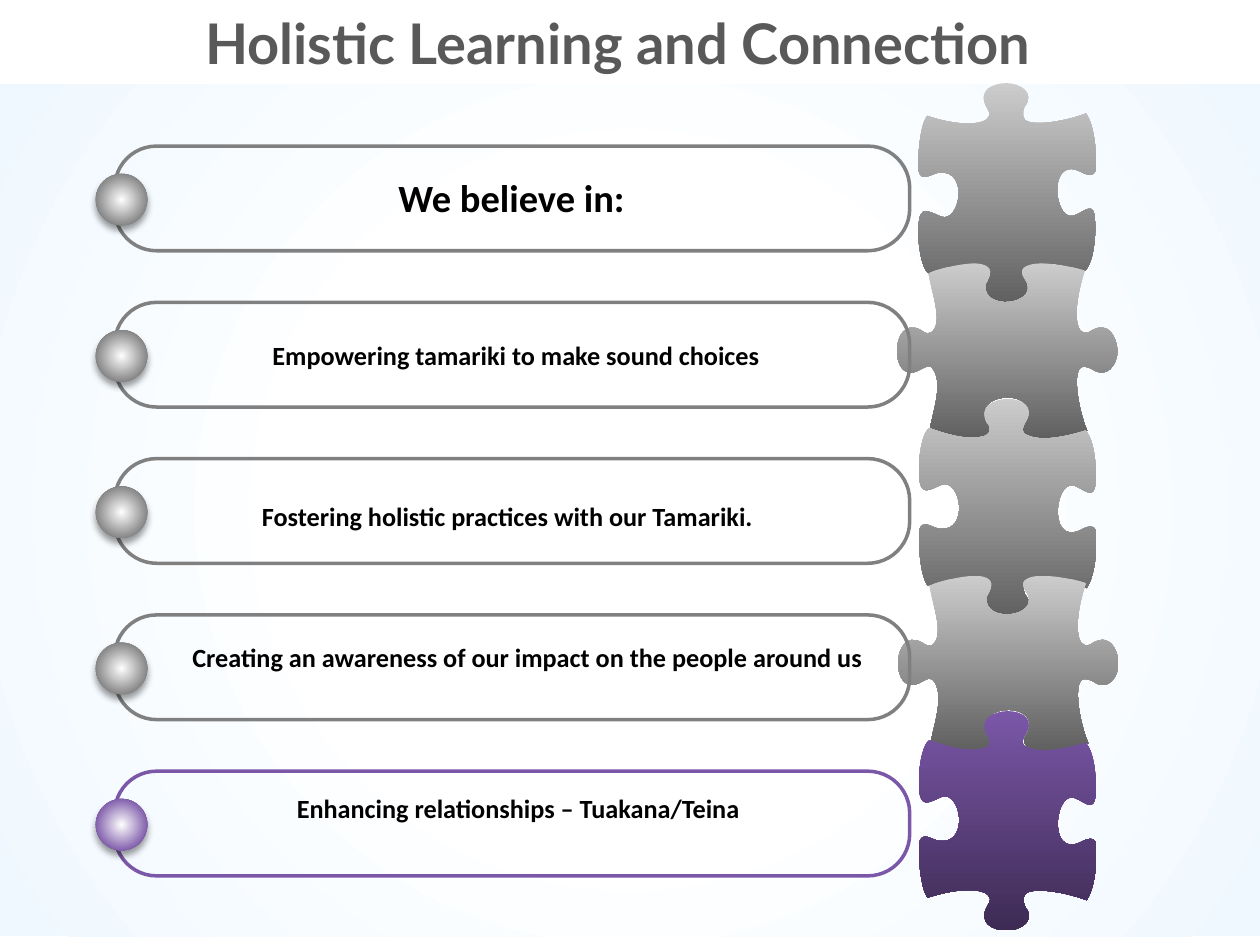
import lxml.etree
import pptx
import pptx.dml.color
import pptx.enum.shapes
import pptx.enum.text
import pptx.oxml.ns
import pptx.util

Pt = pptx.util.Pt
RGBColor = pptx.dml.color.RGBColor
MSO_SHAPE = pptx.enum.shapes.MSO_SHAPE
qn = pptx.oxml.ns.qn

WHITE = RGBColor(0xFF, 0xFF, 0xFF)
BLACK = RGBColor(0x00, 0x00, 0x00)
PALE_BLUE = RGBColor(0xEF, 0xF8, 0xFF)
TITLE_GRAY = RGBColor(0x59, 0x59, 0x59)
LIGHT_GRAY = RGBColor(0xCC, 0xCC, 0xCC)
GRAY = RGBColor(0x80, 0x80, 0x80)
DARK_GRAY = RGBColor(0x60, 0x60, 0x60)
PURPLE = RGBColor(0x7B, 0x57, 0xA8)
DARK_PURPLE = RGBColor(0x3D, 0x2B, 0x54)

OUTLINE_UNIT = 0.72
ROW_TOP = 83.5
ROW_PITCH = 89.3

TALL_SIZE = (141, 175)
TALL_OUTLINE = [
    (70, 0), (81, 0), (93, 8), (84, 19), (83, 21), (83, 23), (83, 26),
    (83, 36), (115, 31), (133, 24), (140, 34), (141, 56), (141, 65),
    (141, 73), (137, 75), (128, 70), (101, 57), (108, 116), (126, 104),
    (131, 102), (140, 93), (140, 109), (141, 114), (140, 142), (132, 149),
    (123, 146), (95, 138), (83, 147), (82, 149), (82, 152), (84, 155),
    (101, 181), (40, 180), (54, 155), (58, 151), (57, 145), (49, 144),
    (41, 142), (27, 144), (8, 151), (1, 146), (-1, 120), (0, 113),
    (1, 96), (8, 102), (18, 106), (33, 111), (40, 69), (17, 71),
    (11, 71), (2, 80), (0, 69), (-1, 62), (1, 32), (7, 26),
    (34, 35), (54, 33), (56, 26), (57, 25), (56, 22), (54, 19),
    (47, 6), (58, 0), (70, 0),
]
WIDE_SIZE = (175, 139)
WIDE_OUTLINE = [
    (175, 69), (175, 81), (166, 92), (155, 84), (153, 83), (151, 82), (148, 82),
    (138, 82), (144, 117), (151, 133), (142, 134), (121, 140), (111, 139),
    (105, 138), (96, 134), (102, 126), (116, 100), (62, 101), (70, 123),
    (74, 131), (79, 135), (64, 139), (57, 140), (35, 133), (26, 132),
    (28, 119), (38, 93), (27, 82), (25, 81), (23, 82), (19, 84),
    (-7, 100), (-6, 39), (19, 53), (23, 56), (25, 56), (27, 55),
    (37, 48), (28, 25), (25, 8), (33, 4), (52, 0), (62, 0),
    (79, 1), (74, 10), (70, 17), (68, 38), (111, 33), (103, 15),
    (100, 10), (95, 4), (106, 1), (116, -2), (142, 3), (149, 6),
    (140, 33), (141, 53), (148, 55), (150, 56), (152, 55), (155, 53),
    (168, 46), (174, 58), (175, 69),
]


def add_element(parent, tag, **attributes):
    element = lxml.etree.SubElement(parent, qn(tag))
    for name, value in attributes.items():
        element.set(name, str(value))
    return element


class PuzzleSlide:
    font = "Calibri"
    border = 2

    def __init__(self, slide):
        self.slide = slide
        self.shapes = slide.shapes

    def text(self, content, *, center, top, width, height, size, font=None, color=BLACK):
        box = self.shapes.add_textbox(Pt(center - width / 2), Pt(top), Pt(width), Pt(height))
        frame = box.text_frame
        frame.word_wrap = True
        frame.auto_size = pptx.enum.text.MSO_AUTO_SIZE.SHAPE_TO_FIT_TEXT
        paragraph = frame.paragraphs[0]
        paragraph.alignment = pptx.enum.text.PP_ALIGN.CENTER
        run = paragraph.add_run()
        run.text = content
        run.font.name = font or self.font
        run.font.size = Pt(size)
        run.font.bold = True
        run.font.color.rgb = color

    def shape(self, kind, left, top, width, height):
        shape = self.shapes.add_shape(kind, Pt(left), Pt(top), Pt(width), Pt(height))
        shape.shadow.inherit = False
        shape.line.fill.background()
        return shape

    def gradient(self, shape, stops, radial=False):
        shape.fill.gradient()
        gradient = shape.element.spPr.find(qn("a:gradFill"))
        for child in list(gradient):
            gradient.remove(child)
        stop_list = add_element(gradient, "a:gsLst")
        for position, color in stops:
            stop = add_element(stop_list, "a:gs", pos=position * 1000)
            add_element(stop, "a:srgbClr", val=color)
        if radial:
            center = add_element(gradient, "a:path", path="circle")
            add_element(center, "a:fillToRect", l=50000, t=50000, r=50000, b=50000)
        else:
            add_element(gradient, "a:lin", ang=5400000, scaled=0)

    def backdrop(self):
        shape = self.shape(MSO_SHAPE.RECTANGLE, 0, 48.24, 720, 486.72)
        self.gradient(shape, [(0, WHITE), (43, WHITE), (100, PALE_BLUE)], radial=True)

    def bar(self, top, color):
        shape = self.shape(MSO_SHAPE.ROUNDED_RECTANGLE, 65.5, top, 454.3, 59.8)
        shape.adjustments[0] = 0.4
        shape.fill.background()
        shape.line.color.rgb = color
        shape.line.width = Pt(self.border)

    def bead(self, top, color):
        shape = self.shape(MSO_SHAPE.OVAL, 54.7, top, 29.5, 29.5)
        self.gradient(shape, [(0, WHITE), (75, color), (100, color)], radial=True)
        effects = shape.element.spPr.find(qn("a:effectLst"))
        shadow = add_element(effects, "a:outerShdw", blurRad=Pt(4), dist=Pt(3),
                             dir=5400000, rotWithShape=0)
        add_element(add_element(shadow, "a:srgbClr", val=BLACK), "a:alpha", val=40000)

    def piece(self, outline, size, left, top, stops, flipped=False):
        width, height = size
        points = [(x, height - y if flipped else y) for x, y in outline]
        builder = self.shapes.build_freeform(*points[0], scale=Pt(OUTLINE_UNIT))
        builder.add_line_segments(points[3::3], close=True)
        shape = builder.convert_to_shape()
        shape.left, shape.top = Pt(left), Pt(top)
        shape.width, shape.height = Pt(width * OUTLINE_UNIT), Pt(height * OUTLINE_UNIT)
        shape.shadow.inherit = False
        shape.line.fill.background()
        self.curve(shape, points, size)
        self.gradient(shape, stops)

    def curve(self, shape, points, size):
        contour = shape.element.spPr.find(".//" + qn("a:path"))
        for child in list(contour):
            contour.remove(child)
        contour.set("w", str(size[0]))
        contour.set("h", str(size[1]))
        start = add_element(contour, "a:moveTo")
        add_element(start, "a:pt", x=points[0][0], y=points[0][1])
        for index in range(1, len(points), 3):
            segment = add_element(contour, "a:cubicBezTo")
            for x, y in points[index:index + 3]:
                add_element(segment, "a:pt", x=x, y=y)
        add_element(contour, "a:close")


def main():
    presentation = pptx.Presentation()
    presentation.slide_width = Pt(720)
    presentation.slide_height = Pt(540)
    page = PuzzleSlide(presentation.slides.add_slide(presentation.slide_layouts[6]))

    page.backdrop()
    tall, wide = (TALL_OUTLINE, TALL_SIZE), (WIDE_OUTLINE, WIDE_SIZE)
    gray_stops = [(0, LIGHT_GRAY), (100, DARK_GRAY)]
    purple_stops = [(0, PURPLE), (100, DARK_PURPLE)]
    page.piece(*tall, 524.9, 47.5, gray_stops)
    page.piece(*wide, 512.6, 150.5, gray_stops)
    page.piece(*tall, 525.2, 227.3, gray_stops, flipped=True)
    page.piece(*wide, 513.2, 329, gray_stops)
    page.piece(*tall, 525.2, 405.7, purple_stops, flipped=True)

    page.text("Holistic Learning and Connection", center=353.2, top=1.4,
              width=702, height=46, size=32, font="Lato", color=TITLE_GRAY)
    rows = [
        ("We believe in:", 292.3, 12.2, 22, GRAY),
        ("Empowering tamariki to make sound choices", 294.9, 17.3, 15, GRAY),
        ("Fostering holistic practices with our Tamariki.", 290, 20.2, 15, GRAY),
        ("Creating an awareness of our impact on the people around us", 301.4, 11.7, 15, GRAY),
        ("Enhancing relationships – Tuakana/Teina", 296.2, 8.6, 15, PURPLE),
    ]
    for index, (content, center, offset, size, color) in enumerate(rows):
        top = ROW_TOP + index * ROW_PITCH
        page.bar(top, color)
        page.bead(top + 15.8, color)
        page.text(content, center=center, top=top + offset, width=418,
                  height=size * 1.2 + 7.2, size=size)

    presentation.save("out.pptx")


if __name__ == "__main__":
    main()
